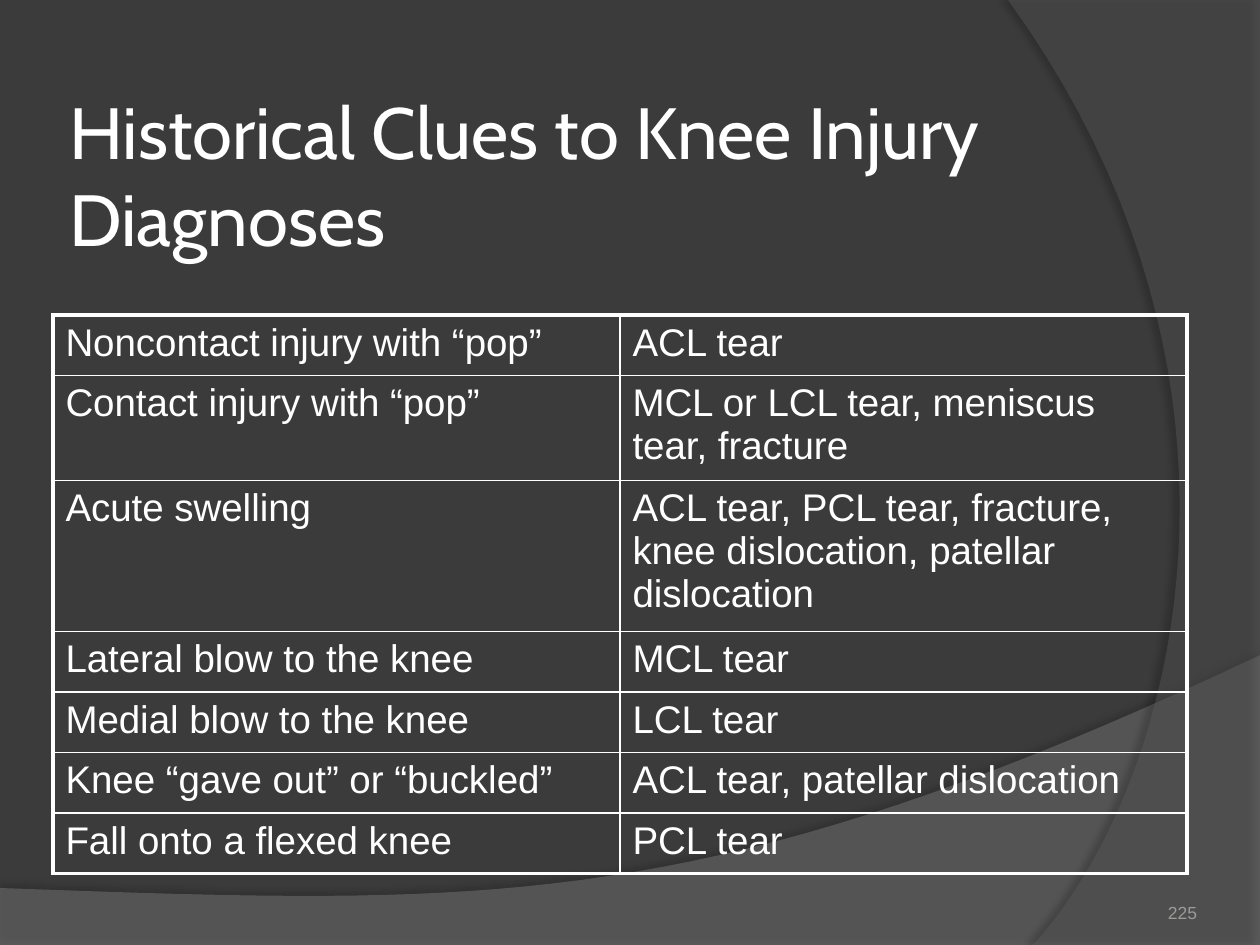
from pptx import Presentation
from pptx.dml.color import RGBColor
from pptx.enum.text import MSO_ANCHOR, PP_ALIGN
from pptx.oxml.ns import qn
from pptx.util import Inches, Pt
from lxml.etree import SubElement

HUES = {"back": "3B3B3B", "wave": "7F7F7F", "arc": "5E5E5E", "ink": "FFFFFF",
        "page": "9D9B9A", "shade": "000000"}
ROWS = [
    ("Noncontact injury with “pop”", "ACL tear"),
    ("Contact injury with “pop”", "MCL or LCL tear, meniscus tear, fracture"),
    ("Acute swelling",
     "ACL tear, PCL tear, fracture, knee dislocation, patellar dislocation"),
    ("Lateral blow to the knee", "MCL tear"),
    ("Medial blow to the knee", "LCL tear"),
    ("Knee “gave out” or “buckled”", "ACL tear, patellar dislocation"),
    ("Fall onto a flexed knee", "PCL tear"),
]


def color(name):
    return RGBColor.from_string(HUES[name])


def add_run(para, text, size, font, hue):
    run = para.add_run()
    run.text = text
    run.font.size = Pt(size)
    run.font.name = font
    run.font.color.rgb = color(hue)


def add_tint(node, hue, alpha):
    tint = SubElement(node, qn("a:srgbClr"), val=HUES[hue])
    SubElement(tint, qn("a:alpha"), val=str(alpha * 1000))


def curve(start, one, two, end, steps=40):
    points = []
    for step in range(1, steps + 1):
        t = step / steps
        u = 1 - t
        points.append(tuple(
            u**3 * a + 3 * u * u * t * b + 3 * u * t * t * c + t**3 * d
            for a, b, c, d in zip(start, one, two, end)))
    return points


def add_swoosh(slide, box, points, hue, alpha, shade):
    left, top, width, height = box
    spots = [(Inches(left + x * width), Inches(top + y * height))
             for x, y in points]
    pen = slide.shapes.build_freeform(*spots[0], scale=1.0)
    pen.add_line_segments(spots[1:], close=True)
    shape = pen.convert_to_shape()
    shape.fill.solid()
    shape.fill.fore_color.rgb = color(hue)
    shape.line.fill.background()
    shape.shadow.inherit = False
    props = shape.element.spPr
    fill = props.find(qn("a:solidFill"))
    fill.clear()
    add_tint(fill, hue, alpha)
    dark, blur, dist, turn = shade
    cast = SubElement(props.find(qn("a:effectLst")), qn("a:outerShdw"),
                      blurRad=str(Pt(blur)), dist=str(Pt(dist)),
                      dir=str(turn * 60000), algn="ctr", rotWithShape="0")
    add_tint(cast, "shade", dark)


def add_wave(slide, box):
    edge = curve((1, 0), (0.56, 0.9), (0.39, 0.86), (0, 0.8))
    add_swoosh(slide, box, [(0, 0.8), (0, 1), (1, 1), (1, 0)] + edge[:-1],
               "wave", 45, (35, 4, 3.5, 270))


def add_arc(slide, box):
    edge = curve((0.1, 1), (0.68, 0.83), (1.09, 0.4), (0, 0))
    add_swoosh(slide, box, [(1, 0), (1, 1), (0.1, 1)] + edge,
               "arc", 40, (45, 4, 4, 180))


def add_label(slide, box, text, size, font, hue, align, anchor, pad):
    label = slide.shapes.add_textbox(*map(Inches, box))
    frame = label.text_frame
    frame.word_wrap = True
    frame.vertical_anchor = anchor
    frame.margin_left = frame.margin_right = Inches(pad)
    frame.margin_top = frame.margin_bottom = Inches(pad)
    para = frame.paragraphs[0]
    para.alignment = align
    add_run(para, text, size, font, hue)


def add_rules(cell, outer):
    props = cell._tc.get_or_add_tcPr()
    rules = []
    for side, thick in outer.items():
        rule = SubElement(props, qn("a:ln" + side),
                          w=str(Pt(2.25 if thick else 1)))
        fill = SubElement(rule, qn("a:solidFill"))
        SubElement(fill, qn("a:srgbClr"), val=HUES["ink"])
        rules.append(rule)
    for spot, rule in enumerate(rules):
        props.insert(spot, rule)


def add_clues(slide, box, high):
    left, top, width = map(Inches, box)
    count = len(ROWS)
    table = slide.shapes.add_table(count, 2, left, top, width,
                                   Inches(sum(high))).table
    table.first_row = table.horz_banding = False
    for col in table.columns:
        col.width = width // 2
    for r, texts in enumerate(ROWS):
        table.rows[r].height = Inches(high[r])
        for c, text in enumerate(texts):
            cell = table.cell(r, c)
            cell.fill.background()
            add_run(cell.text_frame.paragraphs[0], text, 22, "Arial", "ink")
            add_rules(cell, {"L": c == 0, "R": c == 1,
                             "T": r == 0, "B": r == count - 1})


def main():
    deck = Presentation()
    deck.slide_width, deck.slide_height = Inches(10), Inches(7.5)
    slide = deck.slides.add_slide(deck.slide_layouts[6])
    slide.background.fill.solid()
    slide.background.fill.fore_color.rgb = color("back")
    add_wave(slide, (0, 5.2, 10, 2.31))
    add_arc(slide, (8, 0, 2, 7.5))
    add_label(slide, (7.17, 6.83, 2.33, 0.5), "225", 10, "Arial", "page",
              PP_ALIGN.RIGHT, MSO_ANCHOR.BOTTOM, 0)
    add_label(slide, (0.5, 0.67, 8.25, 1.42),
              "Historical Clues to Knee Injury Diagnoses", 41.4, "Cabin",
              "ink", PP_ALIGN.LEFT, MSO_ANCHOR.MIDDLE, 0.05)
    add_clues(slide, (0.42, 2.5, 9),
              [0.48, 0.78, 1.13, 0.48, 0.48, 0.48, 0.48])
    deck.save("out.pptx")


if __name__ == "__main__":
    main()
